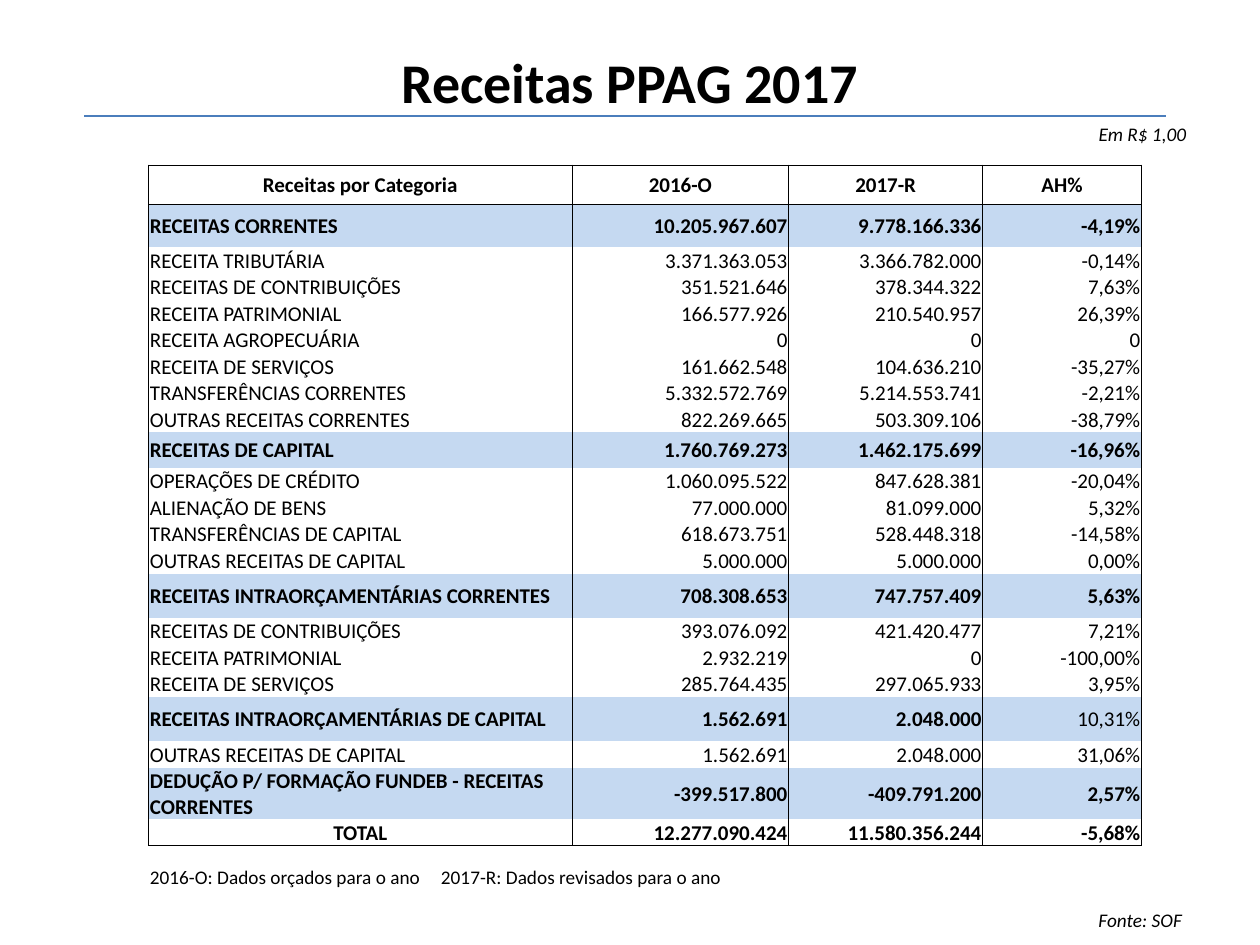
from lxml.etree import SubElement
from pptx import Presentation
from pptx.dml.color import RGBColor
from pptx.enum.shapes import MSO_CONNECTOR
from pptx.enum.text import MSO_ANCHOR, PP_ALIGN
from pptx.oxml import parse_xml
from pptx.oxml.ns import nsdecls, qn
from pptx.util import Inches, Pt

COLORS = {"text": "000000", "group": "C5D9F1", "border": "000000", "rule": "4B7EBC"}
FONT = "Calibri"
COLUMN_WIDTHS = [3.36, 1.72, 1.54, 1.26]
HEADER_HEIGHT, DETAIL_HEIGHT, NOTE_HEIGHT = 0.31, 0.2, 0.35
HEADER = ["Receitas por Categoria", "2016-O", "2017-R", "AH%"]

# Each group: row height, its own row, its detail rows
GROUPS = [
    (0.34, ["RECEITAS CORRENTES", "10.205.967.607", "9.778.166.336", "-4,19%"], [
        ["RECEITA TRIBUTÁRIA", "3.371.363.053", "3.366.782.000", "-0,14%"],
        ["RECEITAS DE CONTRIBUIÇÕES", "351.521.646", "378.344.322", "7,63%"],
        ["RECEITA PATRIMONIAL", "166.577.926", "210.540.957", "26,39%"],
        ["RECEITA AGROPECUÁRIA", "0", "0", "0"],
        ["RECEITA DE SERVIÇOS", "161.662.548", "104.636.210", "-35,27%"],
        ["TRANSFERÊNCIAS CORRENTES", "5.332.572.769", "5.214.553.741", "-2,21%"],
        ["OUTRAS RECEITAS CORRENTES", "822.269.665", "503.309.106", "-38,79%"],
    ]),
    (0.28, ["RECEITAS DE CAPITAL", "1.760.769.273", "1.462.175.699", "-16,96%"], [
        ["OPERAÇÕES DE CRÉDITO", "1.060.095.522", "847.628.381", "-20,04%"],
        ["ALIENAÇÃO DE BENS", "77.000.000", "81.099.000", "5,32%"],
        ["TRANSFERÊNCIAS DE CAPITAL", "618.673.751", "528.448.318", "-14,58%"],
        ["OUTRAS RECEITAS DE CAPITAL", "5.000.000", "5.000.000", "0,00%"],
    ]),
    (0.35, ["RECEITAS INTRAORÇAMENTÁRIAS CORRENTES", "708.308.653", "747.757.409", "5,63%"], [
        ["RECEITAS DE CONTRIBUIÇÕES", "393.076.092", "421.420.477", "7,21%"],
        ["RECEITA PATRIMONIAL", "2.932.219", "0", "-100,00%"],
        ["RECEITA DE SERVIÇOS", "285.764.435", "297.065.933", "3,95%"],
    ]),
    (0.35, ["RECEITAS INTRAORÇAMENTÁRIAS DE CAPITAL", "1.562.691", "2.048.000", "10,31%"], [
        ["OUTRAS RECEITAS DE CAPITAL", "1.562.691", "2.048.000", "31,06%"],
    ]),
    (0.35, ["DEDUÇÃO P/ FORMAÇÃO FUNDEB - RECEITAS CORRENTES",
            "-399.517.800", "-409.791.200", "2,57%"], []),
]
TOTAL = ["TOTAL", "12.277.090.424", "11.580.356.244", "-5,68%"]
NOTE = "2016-O: Dados orçados para o ano\t2017-R: Dados revisados para o ano"
NOTE_TAB = 2.31
LIGHT_CELLS = {"10,31%"}  # set in regular weight although in a group row


def write_text(text_frame, text, size, align=PP_ALIGN.LEFT, bold=False, italic=False):
    text_frame.text = text
    paragraph = text_frame.paragraphs[0]
    paragraph.alignment = align
    for run in paragraph.runs:
        run.font.name = FONT
        run.font.size = Pt(size)
        run.font.bold = bold
        run.font.italic = italic
        run.font.color.rgb = RGBColor.from_string(COLORS["text"])


def add_label(slide, box, text, size, wrap=False, **style):
    shape = slide.shapes.add_textbox(*map(Inches, box))
    shape.text_frame.word_wrap = wrap
    shape.text_frame.vertical_anchor = MSO_ANCHOR.MIDDLE if wrap else MSO_ANCHOR.TOP
    write_text(shape.text_frame, text, size, **style)


def add_rule(slide, left, right, top):
    line = slide.shapes.add_connector(
        MSO_CONNECTOR.STRAIGHT, Inches(left), Inches(top), Inches(right), Inches(top))
    line.line.color.rgb = RGBColor.from_string(COLORS["rule"])
    line.line.width = Pt(0.75)
    SubElement(line._element.spPr, qn("a:effectLst"))


def set_borders(cell, sides):
    """Draw the sides named in a string of L, R, T and B; clear the others."""
    properties = cell._tc.get_or_add_tcPr()
    for position, side in enumerate("LRTB"):
        paint = (f'<a:solidFill><a:srgbClr val="{COLORS["border"]}"/></a:solidFill>'
                 if side in sides else "<a:noFill/>")
        properties.insert(position, parse_xml(
            f'<a:ln{side} {nsdecls("a")} w="{Pt(0.5)}">{paint}</a:ln{side}>'))


def format_cell(cell, sides, fill=None, anchor=MSO_ANCHOR.MIDDLE):
    cell.margin_left = cell.margin_right = cell.margin_top = Inches(0.01)
    cell.margin_bottom = 0
    cell.vertical_anchor = anchor
    if fill:
        cell.fill.solid()
        cell.fill.fore_color.rgb = RGBColor.from_string(fill)
    else:
        cell.fill.background()
    set_borders(cell, sides)


def fill_row(row, height, texts, sides, label_align=PP_ALIGN.LEFT,
             value_align=PP_ALIGN.RIGHT, bold=True, fill=None):
    row.height = Inches(height)
    for column, (cell, text) in enumerate(zip(row.cells, texts)):
        write_text(cell.text_frame, text, 12, value_align if column else label_align,
                   bold=bold and text not in LIGHT_CELLS)
        format_cell(cell, sides, fill)


def fill_note_row(table, row_index):
    table.rows[row_index].height = Inches(NOTE_HEIGHT)
    note = table.cell(row_index, 0)
    note.merge(table.cell(row_index, 2))
    write_text(note.text_frame, NOTE, 11)
    tabs = SubElement(note.text_frame.paragraphs[0]._p.get_or_add_pPr(), qn("a:tabLst"))
    SubElement(tabs, qn("a:tab"), pos=str(Inches(NOTE_TAB)), algn="l")
    for cell in table.rows[row_index].cells:
        format_cell(cell, "T", anchor=MSO_ANCHOR.BOTTOM)


def add_revenue_table(slide, left, top):
    row_count = 3 + sum(1 + len(details) for _, _, details in GROUPS)
    table = slide.shapes.add_table(
        row_count, len(HEADER), Inches(left), Inches(top),
        Inches(sum(COLUMN_WIDTHS)), Inches(row_count * DETAIL_HEIGHT)).table
    table.first_row = table.horz_banding = False
    for column, width in zip(table.columns, COLUMN_WIDTHS):
        column.width = Inches(width)

    rows = iter(table.rows)
    fill_row(next(rows), HEADER_HEIGHT, HEADER, "LRTB", PP_ALIGN.CENTER, PP_ALIGN.CENTER)
    for index, (height, group, details) in enumerate(GROUPS):
        fill_row(next(rows), height, group, "LR" if index else "LRT", fill=COLORS["group"])
        for detail in details:
            fill_row(next(rows), DETAIL_HEIGHT, detail, "LR", bold=False)
    fill_row(next(rows), DETAIL_HEIGHT, TOTAL, "LRB", PP_ALIGN.CENTER)
    fill_note_row(table, row_count - 1)


def main():
    presentation = Presentation()
    presentation.slide_width, presentation.slide_height = Inches(10), Inches(7.5)
    slide = presentation.slides.add_slide(presentation.slide_layouts[6])
    add_label(slide, (0.5, 0.3, 9, 0.69), "Receitas PPAG 2017", 32, wrap=True,
              align=PP_ALIGN.CENTER, bold=True)
    add_revenue_table(slide, 1.18, 1.31)
    add_rule(slide, 0.67, 9.25, 0.92)
    add_label(slide, (8.62, 0.92, 0.91, 0.29), "Em R$ 1,00", 11, italic=True)
    add_label(slide, (8.62, 7.16, 0.87, 0.29), "Fonte: SOF", 11, italic=True)
    presentation.save("out.pptx")


if __name__ == "__main__":
    main()
